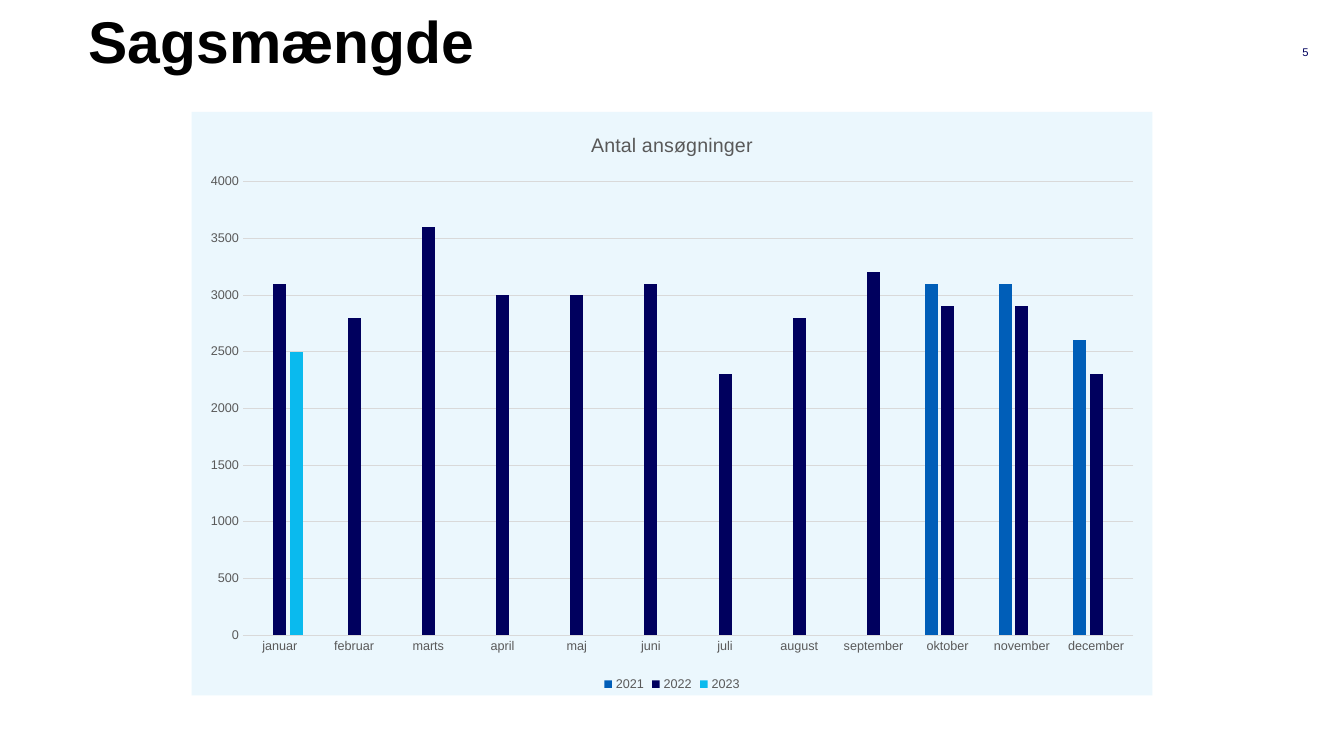
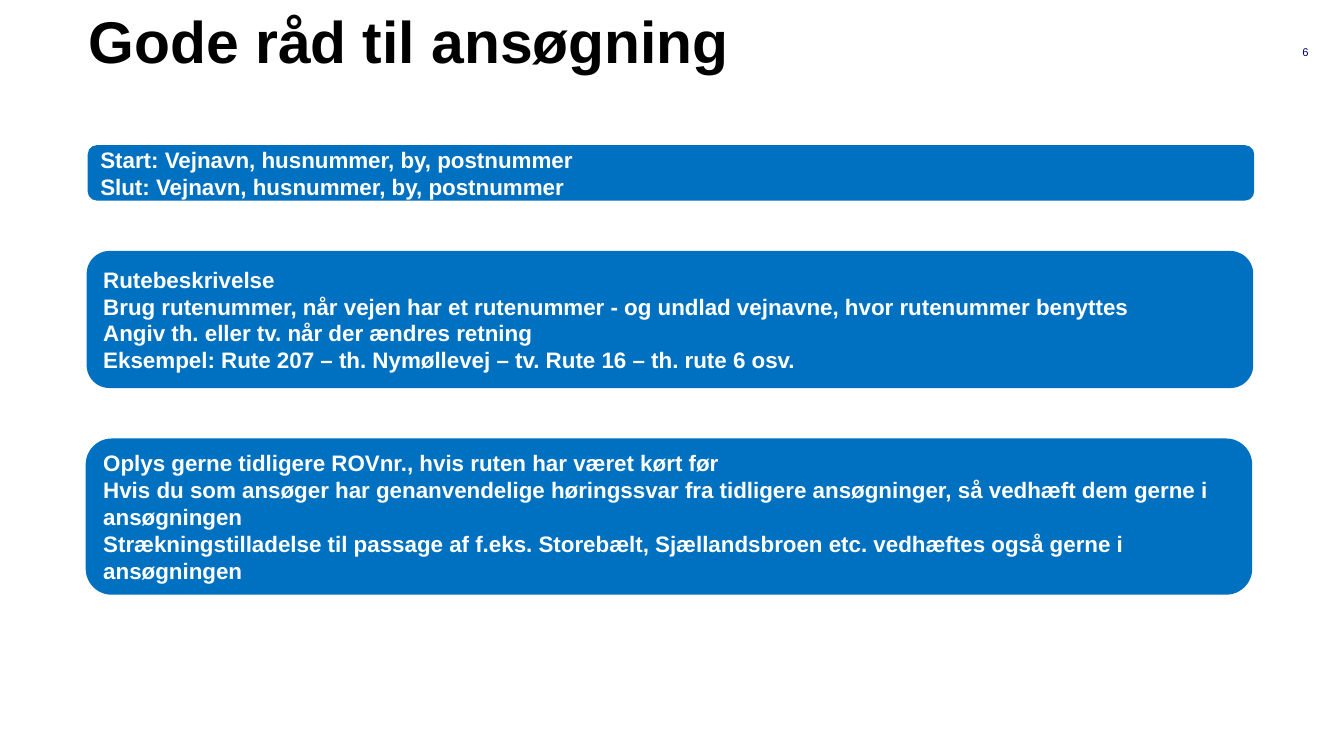
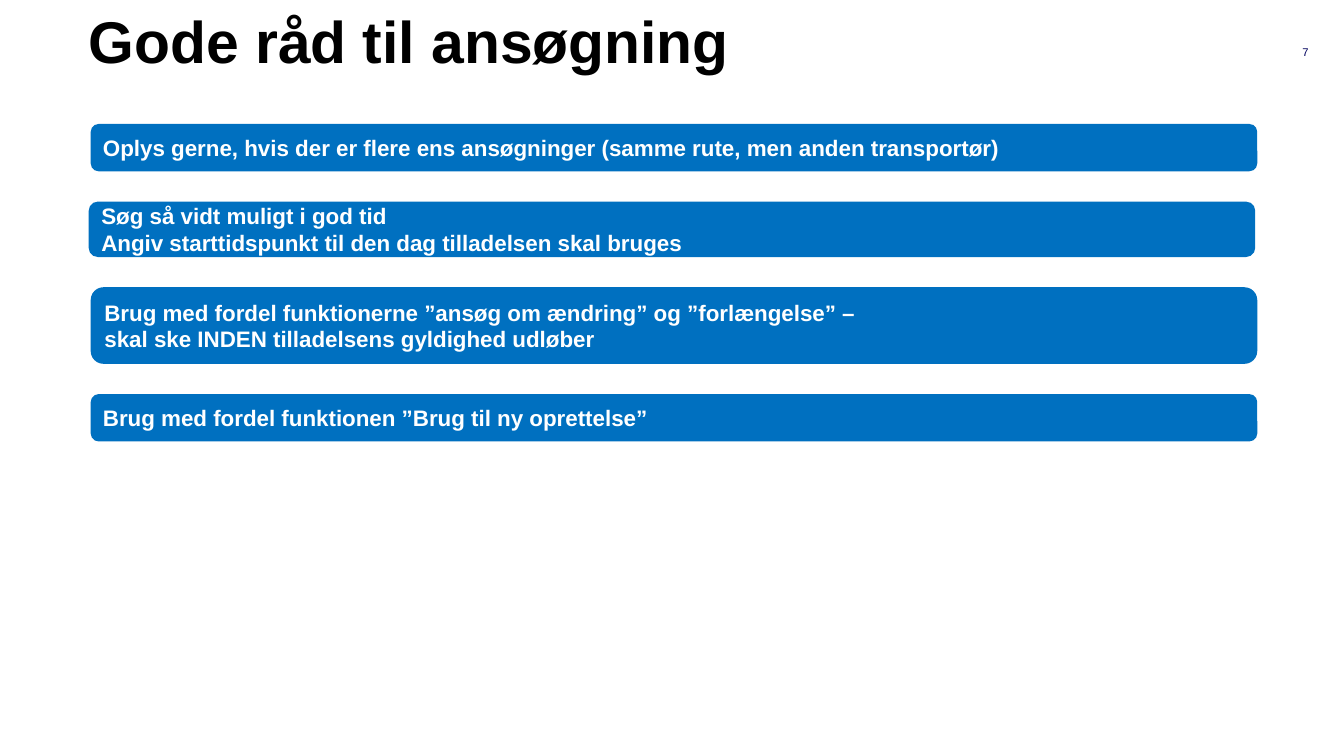
from dataclasses import dataclass

from pptx import Presentation
from pptx.chart.data import CategoryChartData
from pptx.dml.color import RGBColor
from pptx.enum.chart import XL_CHART_TYPE, XL_LEGEND_POSITION, XL_TICK_MARK
from pptx.enum.shapes import MSO_SHAPE
from pptx.enum.text import MSO_ANCHOR, PP_ALIGN
from pptx.oxml import parse_xml
from pptx.oxml.ns import nsdecls, qn
from pptx.util import Inches, Pt

COLUMNS = XL_CHART_TYPE.COLUMN_CLUSTERED
LEGEND_BOTTOM = XL_LEGEND_POSITION.BOTTOM
NO_TICK = XL_TICK_MARK.NONE
ROUNDED = MSO_SHAPE.ROUNDED_RECTANGLE
MIDDLE = MSO_ANCHOR.MIDDLE
BOTTOM = MSO_ANCHOR.BOTTOM
LEFT = PP_ALIGN.LEFT
RIGHT = PP_ALIGN.RIGHT


@dataclass(frozen=True)
class Theme:
    font: str = "Arial"
    title_color: str = "000000"
    number_color: str = "00005E"
    card_fill: str = "0070C0"
    card_text: str = "FFFFFF"
    chart_fill: str = "EBF7FD"
    chart_text: str = "595959"
    grid: str = "D9D9D9"
    series: tuple = ("005EB8", "00005E", "0ABAEE")
    title_size: int = 42
    number_size: int = 8
    card_size: int = 16
    chart_title_size: int = 14
    chart_size: int = 9


theme = Theme()


def write_text(frame, lines, size, color, bold=False, align=LEFT, anchor=MIDDLE, inset=(0, 0)):
    frame.word_wrap = True
    frame.vertical_anchor = anchor
    frame.margin_left = frame.margin_right = Inches(inset[0])
    frame.margin_top = frame.margin_bottom = Inches(inset[1])
    for index, line in enumerate(lines):
        para = frame.add_paragraph() if index else frame.paragraphs[0]
        para.alignment = align
        span = para.add_run()
        span.text = line
        span.font.name = theme.font
        span.font.size = Pt(size)
        span.font.bold = bold
        span.font.color.rgb = RGBColor.from_string(color)


def add_page(deck, title, number):
    page = deck.slides.add_slide(deck.slide_layouts[6])
    title_box = page.shapes.add_textbox(Inches(0.88), Inches(0.28), Inches(11.57), Inches(0.47))
    write_text(title_box.text_frame, [title], theme.title_size, theme.title_color,
               bold=True, anchor=BOTTOM)
    title_box.text_frame.paragraphs[0].line_spacing = 1.02
    number_box = page.shapes.add_textbox(Inches(12.45), Inches(0.32), Inches(0.53), Inches(0.4))
    write_text(number_box.text_frame, [str(number)], theme.number_size, theme.number_color,
               align=RIGHT)
    return page


deck = Presentation()
deck.slide_width = Inches(13.33)
deck.slide_height = Inches(7.5)

first_number = 5
page = add_page(deck, "Sagsmængde", first_number)

data = CategoryChartData()
data.categories = ["januar", "februar", "marts", "april", "maj", "juni", "juli",
                   "august", "september", "oktober", "november", "december"]
data.add_series("2021", [None] * 9 + [3100, 3100, 2600])
data.add_series("2022", [3100, 2800, 3600, 3000, 3000, 3100,
                         2300, 2800, 3200, 2900, 2900, 2300])
data.add_series("2023", [2500] + [None] * 11)
chart = page.shapes.add_chart(
    COLUMNS, Inches(1.9), Inches(1.11), Inches(9.53), Inches(5.79), data).chart

chart.font.name = theme.font
chart.font.size = Pt(theme.chart_size)
chart.font.color.rgb = RGBColor.from_string(theme.chart_text)
background = parse_xml(
    f'<c:spPr {nsdecls("c", "a")}><a:solidFill><a:srgbClr val="{theme.chart_fill}"/>'
    '</a:solidFill><a:ln><a:noFill/></a:ln></c:spPr>')
chart.element.find(qn("c:txPr")).addprevious(background)

chart.has_title = True
write_text(chart.chart_title.text_frame, ["Antal ansøgninger"],
           theme.chart_title_size, theme.chart_text)
chart.chart_title.include_in_layout = False
chart.has_legend = True
chart.legend.position = LEGEND_BOTTOM
chart.legend.include_in_layout = False

for axis in (chart.category_axis, chart.value_axis):
    axis.major_tick_mark = NO_TICK
    axis.minor_tick_mark = NO_TICK
chart.value_axis.minimum_scale = 0
chart.value_axis.maximum_scale = 4000
chart.value_axis.major_unit = 500
chart.value_axis.format.line.fill.background()
for line in (chart.category_axis.format.line, chart.value_axis.major_gridlines.format.line):
    line.color.rgb = RGBColor.from_string(theme.grid)
    line.width = Pt(0.75)

plot = chart.plots[0]
plot.vary_by_categories = False
plot.gap_width = 219
plot.overlap = -27
for series, color in zip(plot.series, theme.series):
    series.format.fill.solid()
    series.format.fill.fore_color.rgb = RGBColor.from_string(color)

advice_pages = [
    (1.44, 0.5, [
        (0.87, 0.55, ["Start: Vejnavn, husnummer, by, postnummer",
                      "Slut: Vejnavn, husnummer, by, postnummer"]),
        (0.86, 1.36, ["Rutebeskrivelse",
                      "Brug rutenummer, når vejen har et rutenummer - og undlad vejnavne, "
                      "hvor rutenummer benyttes",
                      "Angiv th. eller tv. når der ændres retning",
                      "Eksempel: Rute 207 – th. Nymøllevej – tv. Rute 16 – th. rute 6 osv."]),
        (0.85, 1.55, ["Oplys gerne tidligere ROVnr., hvis ruten har været kørt før",
                      "Hvis du som ansøger har genanvendelige høringssvar fra tidligere "
                      "ansøgninger, så vedhæft dem gerne i ansøgningen",
                      "Strækningstilladelse til passage af f.eks. Storebælt, Sjællandsbroen "
                      "etc. vedhæftes også gerne i ansøgningen"]),
    ]),
    (1.23, 0.3, [
        (0.9, 0.47, ["Oplys gerne, hvis der er flere ens ansøgninger "
                     "(samme rute, men anden transportør)"]),
        (0.88, 0.55, ["Søg så vidt muligt i god tid",
                      "Angiv starttidspunkt til den dag tilladelsen skal bruges"]),
        (0.9, 0.76, ["Brug med fordel funktionerne ”ansøg om ændring” og ”forlængelse” –",
                     "skal ske INDEN tilladelsens gyldighed udløber"]),
        (0.9, 0.47, ["Brug med fordel funktionen ”Brug til ny oprettelse”"]),
    ]),
]

for number, (top, gap, cards) in enumerate(advice_pages, first_number + 1):
    page = add_page(deck, "Gode råd til ansøgning", number)
    for left, height, lines in cards:
        card = page.shapes.add_shape(
            ROUNDED, Inches(left), Inches(top), Inches(11.57), Inches(height))
        card.shadow.inherit = False
        card.fill.solid()
        card.fill.fore_color.rgb = RGBColor.from_string(theme.card_fill)
        card.line.fill.background()
        write_text(card.text_frame, lines, theme.card_size, theme.card_text,
                   bold=True, inset=(0.1, 0.05))
        top += height + gap

deck.save("out.pptx")
